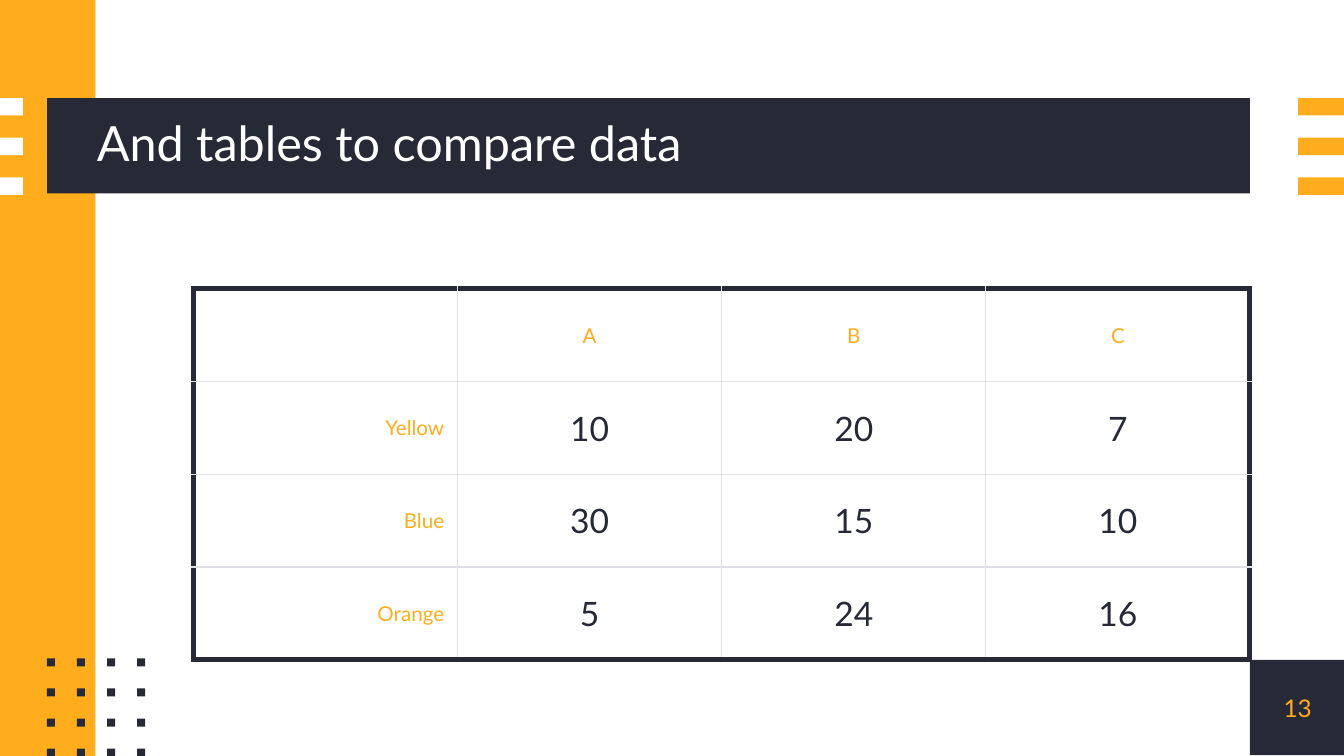
from lxml import etree
from pptx import Presentation
from pptx.dml.color import RGBColor
from pptx.enum.shapes import MSO_SHAPE as SHAPE
from pptx.enum.text import MSO_ANCHOR as ANCHOR, PP_ALIGN as ALIGN
from pptx.oxml.ns import qn
from pptx.util import Inches, Pt

NAVY, AMBER, WHITE, GREY = "272A36", "FFAD1D", "FFFFFF", "E0E0E7"


def rgb(color):
    return RGBColor.from_string(color)


def write(tf, text, size, color, align):
    p = tf.paragraphs[0]
    p.alignment = align
    r = p.add_run()
    r.text = text
    for name, value in {"name": "Lato", "size": Pt(size)}.items():
        setattr(r.font, name, value)
    r.font.color.rgb = rgb(color)
    return p


prs = Presentation()
prs.slide_width = Inches(10)
prs.slide_height = Inches(10) * 9 // 16
s = prs.slides.add_slide(prs.slide_layouts[6])

rects = [
    (9.3, 4.91, 0.71, 0.71, NAVY),
    (0, 0, 0.71, prs.slide_height.inches, AMBER),
    (0.35, 0.73, 8.95, 0.71, NAVY),
]
for i in range(3):
    y = 0.73 + i * 0.59 / 2
    rects += [(0, y, 0.17, 0.13, WHITE), (9.66, y, 0.34, 0.13, AMBER)]
for row in range(4):
    for col in range(4):
        rects.append((0.35 + col * 0.67 / 3, 4.9 + row * 0.67 / 3, 0.06, 0.06, NAVY))

for *box, color in rects:
    sp = s.shapes.add_shape(SHAPE.RECTANGLE, *map(Inches, box))
    sp.shadow.inherit = False
    sp.fill.solid()
    sp.fill.fore_color.rgb = rgb(color)
    sp.line.fill.background()

frame = {"word_wrap": True, "vertical_anchor": ANCHOR.MIDDLE, "margin_left": 0,
         "margin_right": 0, "margin_top": 0, "margin_bottom": 0}
texts = [
    ((0.72, 0.73, 8.58, 0.71), "And tables to compare data", 26, WHITE, ALIGN.LEFT, 0.9),
    ((9.3, 4.91, 0.71, 0.71), "13", 13, AMBER, ALIGN.CENTER, 1.0),
]
for box, text, size, color, align, spacing in texts:
    tf = s.shapes.add_textbox(*map(Inches, box)).text_frame
    for name, value in frame.items():
        setattr(tf, name, value)
    write(tf, text, size, color, align).line_spacing = spacing

data = [
    ["", "A", "B", "C"],
    ["Yellow", "10", "20", "7"],
    ["Blue", "30", "15", "10"],
    ["Orange", "5", "24", "16"],
]
last = len(data) - 1
box = (1.44, 2.15, 7.86, 2.76)
table = s.shapes.add_table(4, 4, *map(Inches, box)).table
table.first_row = table.horz_banding = False

cell_format = {"vertical_anchor": ANCHOR.MIDDLE, "margin_left": Inches(0.1),
               "margin_right": Inches(0.1), "margin_top": Inches(0.07),
               "margin_bottom": Inches(0.07)}
for i, values in enumerate(data):
    for j, text in enumerate(values):
        cell = table.cell(i, j)
        for name, value in cell_format.items():
            setattr(cell, name, value)
        if text:
            size, color = (11, AMBER) if i == 0 or j == 0 else (18, NAVY)
            align = ALIGN.RIGHT if j == 0 else ALIGN.CENTER
            write(cell.text_frame, text, size, color, align)

        tc_pr = cell._tc.get_or_add_tcPr()
        outer = {"L": j == 0, "R": j == last, "T": i == 0, "B": i == last}
        for side, is_outer in outer.items():
            width, color = (3, NAVY) if is_outer else (0.75, GREY)
            ln = etree.SubElement(tc_pr, qn(f"a:ln{side}"), w=str(Pt(width)))
            fill = etree.SubElement(ln, qn("a:solidFill"))
            etree.SubElement(fill, qn("a:srgbClr"), val=color)
        cell.fill.background()

prs.save("out.pptx")
